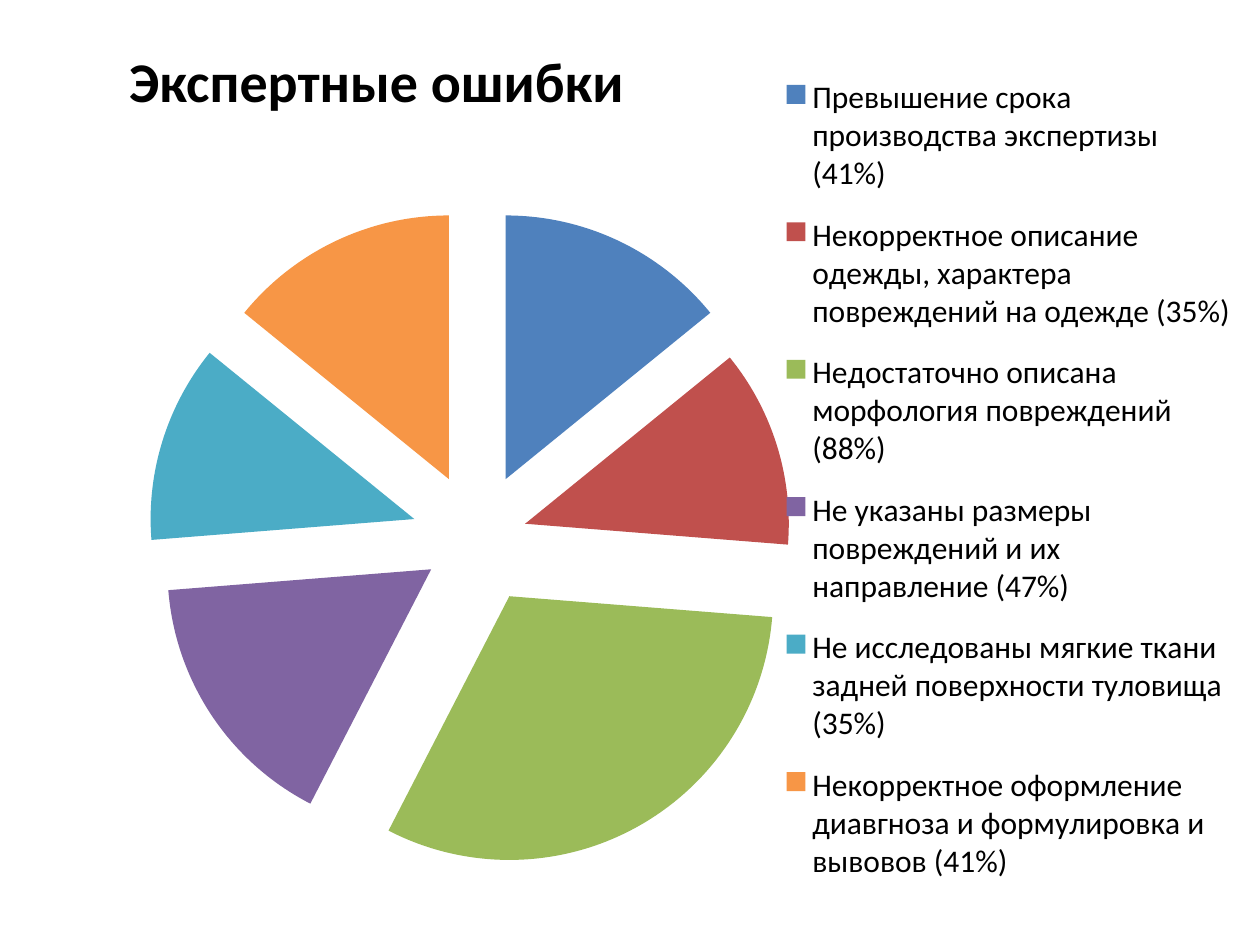
from typing import NamedTuple

import pptx
import pptx.chart.data
import pptx.dml.color
import pptx.enum.chart
import pptx.enum.text
import pptx.oxml
import pptx.util
from pptx.util import Inches

FONT = "Calibri"
BLACK = "000000"


class Mistake(NamedTuple):
    label: str
    share: int
    color: str
    explosion: int = 25


class Box(NamedTuple):
    x: float
    y: float
    w: float
    h: float

    def lengths(self) -> tuple:
        return tuple(Inches(v) for v in self)


MISTAKES = [
    Mistake("Превышение срока производства экспертизы (41%)", 14, "4F81BD"),
    Mistake("Некорректное описание одежды, характера повреждений на одежде (35%)", 12, "C0504D", 19),
    Mistake("Недостаточно описана морфология повреждений (88%)", 31, "9BBB59"),
    Mistake("Не указаны размеры повреждений и их направление (47%)", 16, "8064A2", 21),
    Mistake("Не исследованы мягкие ткани задней поверхности туловища (35%)", 12, "4BACC6"),
    Mistake("Некорректное оформление диавгноза и формулировка и вывовов (41%)", 14, "F79646"),
]
TITLE_BOX = Box(-1.46, 0.01, 9, 1.25)
CHART_BOX = Box(0.3, 0.44, 9.69, 6.73)
# Fractions of the chart area
PLOT_AREA = Box(0.09, 0.16, 0.54, 0.82)
LEGEND_AREA = Box(0.61, 0, 0.37, 1)


def rgb(color: str) -> pptx.dml.color.RGBColor:
    return pptx.dml.color.RGBColor.from_string(color)


def style_font(font, size: float, bold: bool = False) -> None:
    font.name = FONT
    font.size = pptx.util.Pt(size)
    font.bold = bold
    font.color.rgb = rgb(BLACK)


def manual_layout(area: Box, inner: bool = False):
    """Return a c:layout element placing a chart part at the given fractions."""
    ns = pptx.oxml.ns.nsdecls("c")
    target = '<c:layoutTarget val="inner"/>' if inner else ""
    sizes = "".join(f'<c:{k} val="{v}"/>' for k, v in area._asdict().items())
    return pptx.oxml.parse_xml(
        f"<c:layout {ns}><c:manualLayout>{target}"
        f'<c:xMode val="edge"/><c:yMode val="edge"/>{sizes}'
        "</c:manualLayout></c:layout>"
    )


def explode(point_or_series, before: str, percent: int) -> None:
    """Push slices outwards, placing c:explosion ahead of the named child."""
    ns = pptx.oxml.ns.nsdecls("c")
    explosion = pptx.oxml.parse_xml(f'<c:explosion {ns} val="{percent}"/>')
    point_or_series.find(pptx.oxml.ns.qn(before)).addprevious(explosion)


def add_title(slide, text: str) -> None:
    sp = slide.shapes.title
    sp.left, sp.top, sp.width, sp.height = TITLE_BOX.lengths()
    tf = sp.text_frame
    tf.word_wrap = True
    tf.vertical_anchor = pptx.enum.text.MSO_ANCHOR.MIDDLE
    p = tf.paragraphs[0]
    p.alignment = pptx.enum.text.PP_ALIGN.CENTER
    r = p.add_run()
    r.text = text
    style_font(r.font, 32, bold=True)


def add_pie(slide, mistakes: list[Mistake]) -> None:
    data = pptx.chart.data.CategoryChartData()
    data.categories = [m.label for m in mistakes]
    data.add_series("Series 1", [m.share for m in mistakes])
    chart = slide.shapes.add_chart(
        pptx.enum.chart.XL_CHART_TYPE.PIE, *CHART_BOX.lengths(), data
    ).chart
    style_font(chart.font, 18)
    chart.has_title = False
    chart.has_legend = True
    legend = chart.legend
    legend.position = pptx.enum.chart.XL_LEGEND_POSITION.RIGHT
    legend.include_in_layout = False

    plot = chart.plots[0]
    plot.vary_by_categories = True
    series = plot.series[0]
    for i, m in enumerate(mistakes):
        fill = series.points[i].format.fill
        fill.solid()
        fill.fore_color.rgb = rgb(m.color)
    explode(series._element, "c:dPt", 25)
    points = series._element.findall(pptx.oxml.ns.qn("c:dPt"))
    for point, m in zip(points, mistakes):
        explode(point, "c:spPr", m.explosion)

    layout_tag = pptx.oxml.ns.qn("c:layout")
    plot_area = chart._chartSpace.chart.plotArea
    for part in (plot_area, legend._element):
        for old in part.findall(layout_tag):
            part.remove(old)
    plot_area.insert(0, manual_layout(PLOT_AREA, inner=True))
    position = legend._element.find(pptx.oxml.ns.qn("c:legendPos"))
    position.addnext(manual_layout(LEGEND_AREA))


def main() -> None:
    prs = pptx.Presentation()
    prs.slide_width, prs.slide_height = Inches(10), Inches(7.5)
    slide = prs.slides.add_slide(prs.slide_layouts.get_by_name("Title Only"))
    add_title(slide, "Экспертные ошибки ")
    add_pie(slide, MISTAKES)
    prs.save("out.pptx")


if __name__ == "__main__":
    main()
